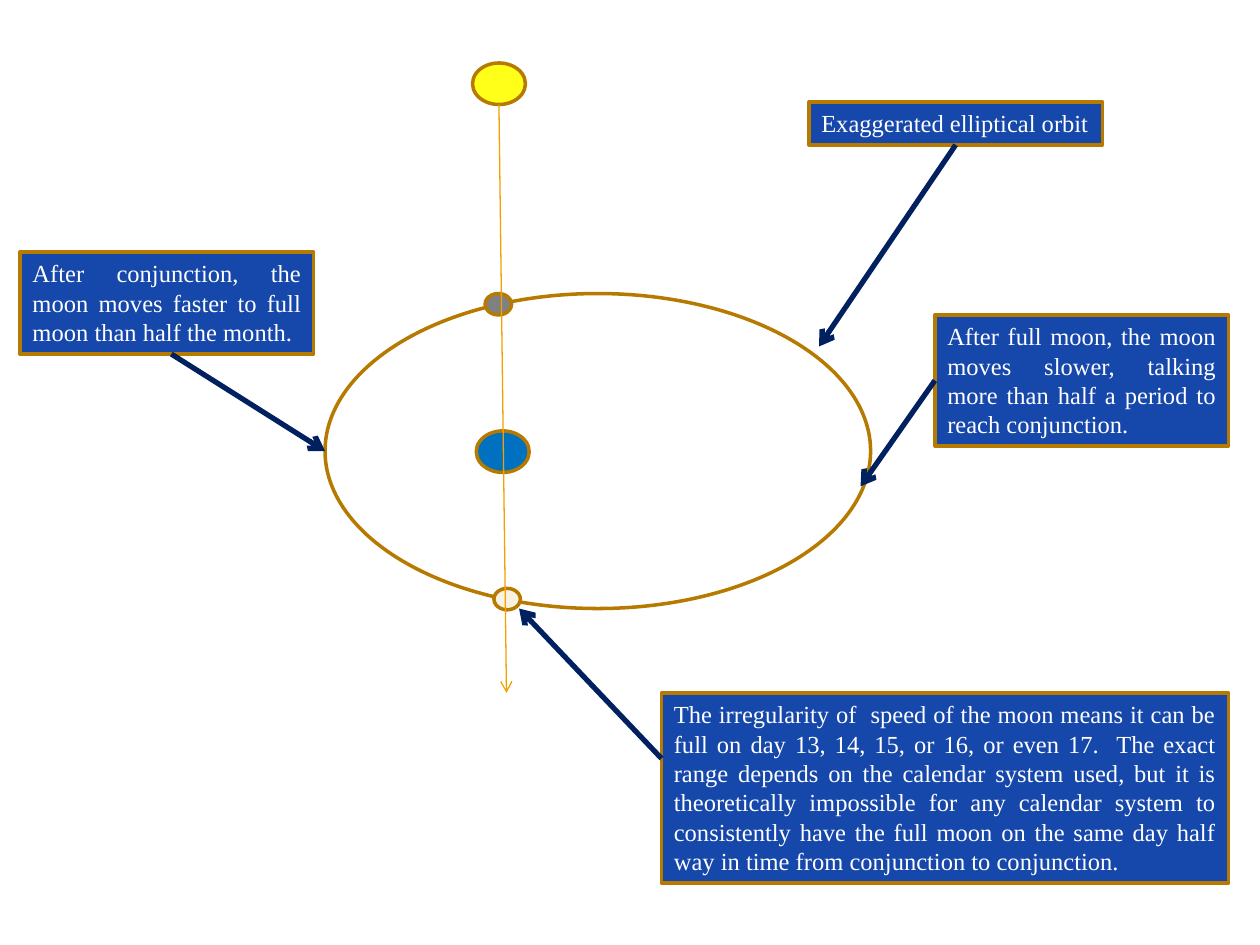
from lxml.etree import SubElement
from pptx import Presentation
from pptx.dml.color import RGBColor
from pptx.enum.shapes import MSO_CONNECTOR, MSO_SHAPE
from pptx.enum.text import MSO_ANCHOR, MSO_AUTO_SIZE, PP_ALIGN
from pptx.oxml.ns import qn
from pptx.util import Inches, Pt

WHITE = RGBColor(0xFF, 0xFF, 0xFF)
BRONZE = RGBColor(0xB7, 0x7A, 0x00)
ORANGE = RGBColor(0xF3, 0xA1, 0x00)
NAVY = RGBColor(0x00, 0x20, 0x60)
BOX_BLUE = RGBColor(0x16, 0x47, 0xAA)
EARTH_BLUE = RGBColor(0x00, 0x70, 0xC0)
GRAY = RGBColor(0x80, 0x80, 0x80)
YELLOW = RGBColor(0xFF, 0xFF, 0x1A)
CREAM = RGBColor(0xF8, 0xF2, 0xE3)

TOP, LEFT = 0, 1
BIG, SMALL = (0.42, 0.33), (0.21, 0.17)


class Diagram:
    font = {"name": "Times New Roman", "size": Pt(14)}
    frame = {"word_wrap": True, "auto_size": MSO_AUTO_SIZE.SHAPE_TO_FIT_TEXT,
             "vertical_anchor": MSO_ANCHOR.TOP}

    def __init__(self, slide):
        self.s = slide

    def shape(self, kind, x, y, w, h, fill):
        sp = self.s.shapes.add_shape(kind, Inches(x), Inches(y), Inches(w), Inches(h))
        sp.shadow.inherit = False
        sp.fill.solid()
        sp.fill.fore_color.rgb = fill
        sp.line.color.rgb = BRONZE
        sp.line.width = Pt(2)
        return sp

    def body(self, x, y, size, fill):
        return self.shape(MSO_SHAPE.FLOWCHART_CONNECTOR, x, y, *size, fill)

    def note(self, x, y, w, h, text):
        sp = self.shape(MSO_SHAPE.RECTANGLE, x, y, w, h, BOX_BLUE)
        tf = sp.text_frame
        for name, value in self.frame.items():
            setattr(tf, name, value)
        p = tf.paragraphs[0]
        p.alignment = PP_ALIGN.JUSTIFY
        r = p.add_run()
        r.text = text
        for name, value in self.font.items():
            setattr(r.font, name, value)
        r.font.color.rgb = WHITE
        return sp

    def arrow(self, start, end, color=NAVY, width=3):
        points = [Inches(v) for v in (*start, *end)]
        c = self.s.shapes.add_connector(MSO_CONNECTOR.STRAIGHT, *points)
        c.line.color.rgb = color
        c.line.width = Pt(width)
        SubElement(c.line._get_or_add_ln(), qn("a:tailEnd"), type="arrow")
        SubElement(c._element.spPr, qn("a:effectLst"))
        return c


def main():
    prs = Presentation()
    prs.slide_width, prs.slide_height = Inches(10), Inches(7.5)
    d = Diagram(prs.slides.add_slide(prs.slide_layouts[6]))

    d.shape(MSO_SHAPE.OVAL, 2.58, 2.33, 4.33, 2.5, WHITE)
    d.body(3.78, 3.42, BIG, EARTH_BLUE)
    d.body(3.85, 2.33, SMALL, GRAY)
    d.body(3.75, 0.5, BIG, YELLOW)
    d.body(3.92, 4.67, SMALL, CREAM)
    d.arrow((3.96, 0.83), (4.02, 5.5), ORANGE, 0.75)

    orbit_note = d.note(6.42, 0.81, 2.33, 0.34, "Exaggerated elliptical orbit")
    d.arrow((7.58, 1.14), (6.5, 2.75)).begin_connect(orbit_note, 2)

    d.note(0.16, 2, 2.33, 0.81,
           "After conjunction, the moon moves faster to full moon than half the month.")
    d.arrow((1.36, 2.81), (2.58, 3.58))

    slower_note = d.note(7.42, 2.5, 2.33, 1.04,
                         "After full moon, the moon moves slower, talking more than "
                         "half a period to reach conjunction.")
    d.arrow((7.42, 3.02), (6.83, 3.86)).begin_connect(slower_note, LEFT)

    d.note(5.25, 5.5, 4.5, 1.51,
           "The irregularity of  speed of the moon means it can be full on day "
           "13, 14, 15, or 16, or even 17.  The exact range depends on the calendar "
           "system used, but it is theoretically impossible for any calendar system "
           "to consistently have the full moon on the same day half way in time from "
           "conjunction to conjunction.")
    d.arrow((5.25, 6.02), (4.12, 4.83))

    prs.save("out.pptx")


if __name__ == "__main__":
    main()
